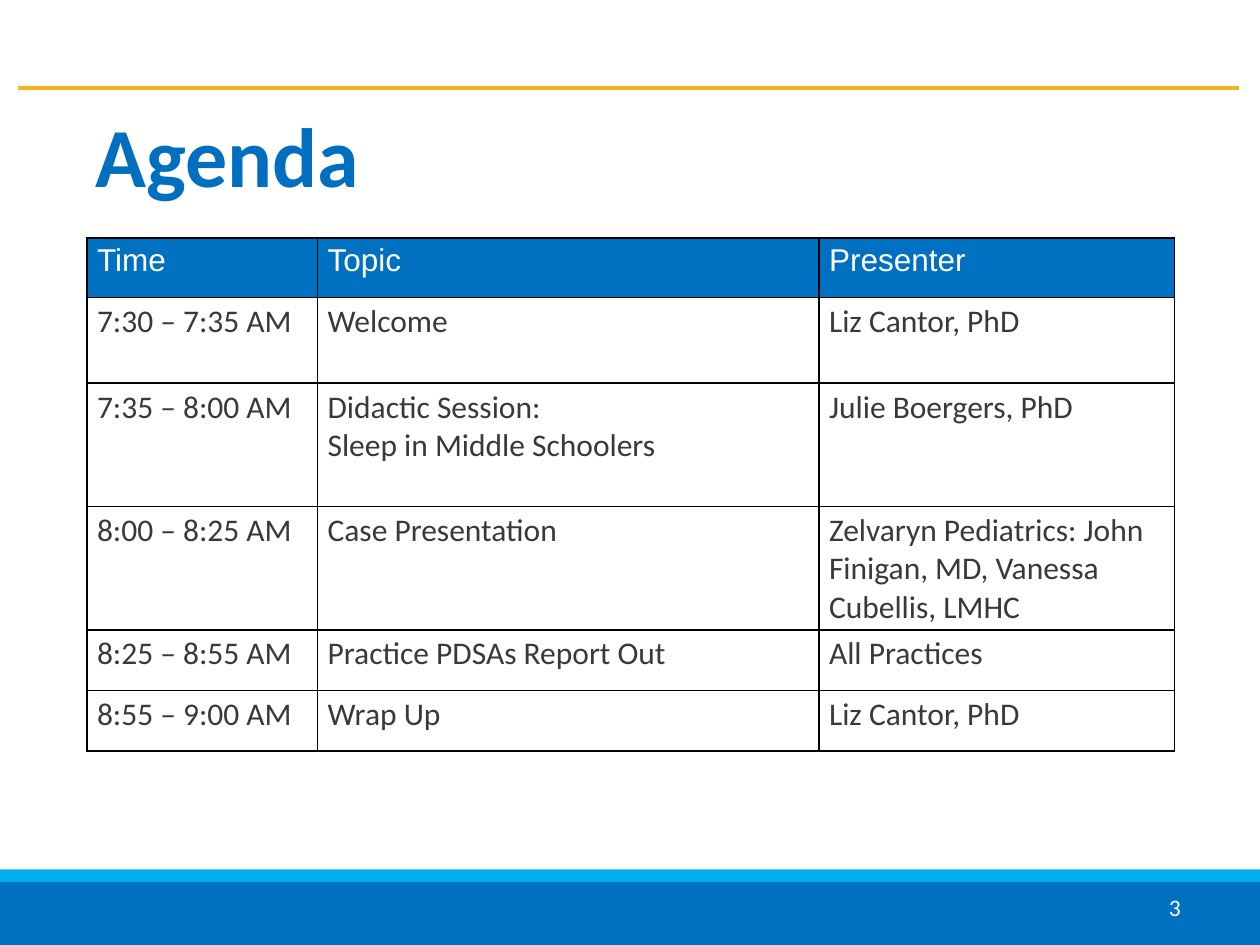
"""Build the meeting agenda slide with its schedule table."""
from lxml.etree import SubElement
from pptx import Presentation
from pptx.dml.color import RGBColor
from pptx.enum.shapes import MSO_CONNECTOR as Connector, MSO_SHAPE as Shape
from pptx.enum.text import MSO_ANCHOR as Anchor, PP_ALIGN as Align
from pptx.oxml.ns import qn
from pptx.util import Inches, Pt

COLORS = {"blue": "0070C0", "title": "006FC0", "cyan": "00B0F0", "gold": "F7B31D",
          "white": "FFFFFF", "ink": "3A3838", "border": "000000"}
WIDTH, HEIGHT = 10, 7.5
LEFT = 0.69
TABLE_TOP = 1.89
COLUMNS = [1.83, 3.98, 2.82]
ROWS = [0.47, 0.68, 0.98, 0.98, 0.48, 0.48]
BANDS = [("cyan", 0.6), ("blue", 0.5)]
AGENDA = [
    ("Time", "Topic", "Presenter"),
    ("7:30 – 7:35 AM", "Welcome", "Liz Cantor, PhD"),
    ("7:35 – 8:00 AM", "Didactic Session:\nSleep in Middle Schoolers", "Julie Boergers, PhD"),
    ("8:00 – 8:25 AM", "Case Presentation",
     "Zelvaryn Pediatrics: John Finigan, MD, Vanessa Cubellis, LMHC"),
    ("8:25 – 8:55 AM", "Practice PDSAs Report Out", "All Practices"),
    ("8:55 – 9:00 AM", "Wrap Up", "Liz Cantor, PhD"),
]


def color(name):
    return RGBColor.from_string(COLORS[name])


def write(frame, text, size, font, ink, bold=False, align=Align.LEFT):
    frame.text = text
    frame.word_wrap = True
    for para in frame.paragraphs:
        para.alignment = align
        for span in para.runs:
            span.font.size, span.font.name, span.font.bold = Pt(size), font, bold
            span.font.color.rgb = color(ink)


def set_margins(target, side):
    target.margin_left = target.margin_right = Inches(side)
    target.margin_top = target.margin_bottom = Inches(0.04)


def add_borders(cell):
    properties = cell._tc.get_or_add_tcPr()
    for index, side in enumerate(("lnL", "lnR", "lnT", "lnB")):
        line = properties.makeelement(qn(f"a:{side}"), {"w": str(Pt(1))})
        fill = SubElement(line, qn("a:solidFill"))
        SubElement(fill, qn("a:srgbClr"), val=COLORS["border"])
        properties.insert(index, line)


def add_frame(page):
    for name, height in BANDS:
        band = page.shapes.add_shape(Shape.RECTANGLE, 0, Inches(HEIGHT - height),
                                     Inches(WIDTH), Inches(height))
        band.shadow.inherit = False
        band.fill.solid()
        band.fill.fore_color.rgb = color(name)
        band.line.fill.background()
    rule = page.shapes.add_connector(Connector.STRAIGHT, Inches(0.14), Inches(0.7),
                                     Inches(9.83), Inches(0.7))
    rule.line.color.rgb = color("gold")
    rule.line.width = Pt(2)
    SubElement(rule._element.spPr, qn("a:effectLst"))
    number = page.shapes.add_textbox(Inches(7.19), Inches(7.05), Inches(2.25), Inches(0.4))
    set_margins(number.text_frame, 0.07)
    write(number.text_frame, "3", 13.5, "Calibri", "white", align=Align.RIGHT)


def add_title(page):
    title = page.shapes.title
    title.left, title.top = Inches(LEFT), Inches(0.84)
    title.width, title.height = Inches(8.63), Inches(0.86)
    frame = title.text_frame
    set_margins(frame, 0.07)
    frame.vertical_anchor = Anchor.MIDDLE
    write(frame, "Agenda", 48, "Calibri", "title", bold=True)
    frame.paragraphs[0].line_spacing = 0.9


def add_schedule(page):
    table = page.shapes.add_table(len(ROWS), len(COLUMNS), Inches(LEFT), Inches(TABLE_TOP),
                                  Inches(sum(COLUMNS)), Inches(sum(ROWS))).table
    table.horz_banding = False
    for column, width in zip(table.columns, COLUMNS):
        column.width = Inches(width)
    for index, (row, height, texts) in enumerate(zip(table.rows, ROWS, AGENDA)):
        row.height = Inches(height)
        font, ink, fill = ("Calibri", "ink", "white") if index else ("Arial", "white", "blue")
        for cell, text in zip(row.cells, texts):
            set_margins(cell, 0.08)
            write(cell.text_frame, text, 18, font, ink)
            cell.fill.solid()
            cell.fill.fore_color.rgb = color(fill)
            add_borders(cell)


def main():
    deck = Presentation()
    deck.slide_width, deck.slide_height = Inches(WIDTH), Inches(HEIGHT)
    page = deck.slides.add_slide(deck.slide_layouts[5])
    add_frame(page)
    add_title(page)
    add_schedule(page)
    deck.save("out.pptx")


if __name__ == "__main__":
    main()
